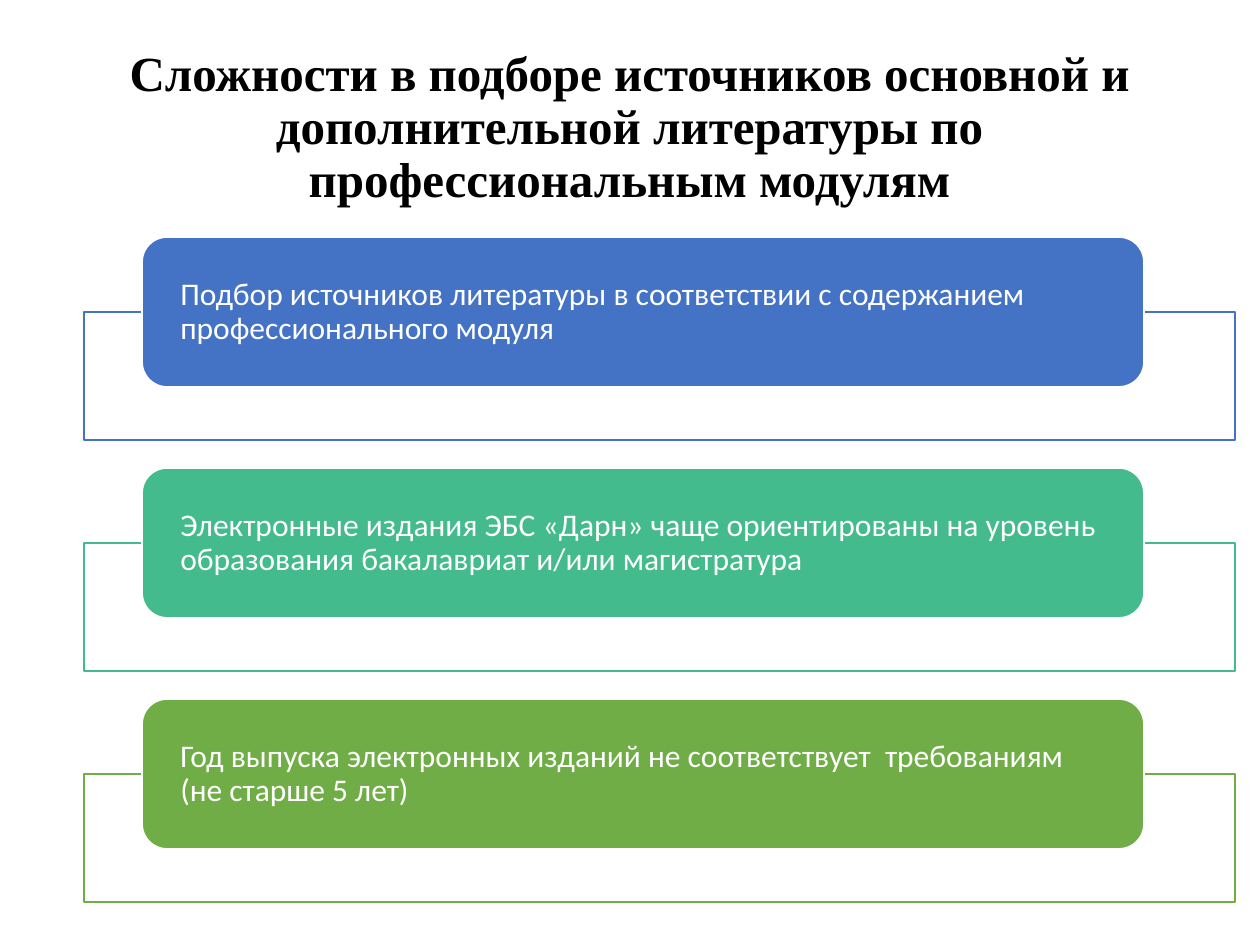
from lxml.etree import SubElement
from pptx import Presentation
from pptx.dml.color import RGBColor
from pptx.enum.shapes import MSO_SHAPE as Shape
from pptx.enum.text import MSO_ANCHOR as Anchor, PP_ALIGN as Align
from pptx.oxml.ns import qn
from pptx.util import Emu, Pt

THEME = {
    "white": RGBColor.from_string("FFFFFF"),
    "title_color": RGBColor.from_string("000000"),
    "title_font": "Times New Roman",
    "title_size": Pt(28),
    "body_font": "Calibri",
    "body_size": Pt(18),
    "line": Pt(1),
}
EMU_PER_PX = 914400 / 126


def px(length):
    return Emu(round(length * EMU_PER_PX))


def write(box, text, align, font, size, color, bold=False):
    frame = box.text_frame
    frame.word_wrap = True
    frame.vertical_anchor = Anchor.MIDDLE
    para = frame.paragraphs[0]
    para.alignment = align
    para.line_spacing = 0.9
    span = para.add_run()
    span.text = text
    span.font.name = font
    span.font.size = size
    span.font.bold = bold
    span.font.color.rgb = color


deck = Presentation()
deck.slide_width, deck.slide_height = px(1260), px(945)
page = deck.slides.add_slide(deck.slide_layouts[6])

# Title
title = page.shapes.add_textbox(px(44), px(37), px(1171), px(183))
write(title, "Сложности в подборе источников основной и дополнительной литературы "
      "по профессиональным модулям", Align.CENTER,
      THEME["title_font"], THEME["title_size"], THEME["title_color"], bold=True)

# Difficulties: an outlined frame behind a filled card
difficulties = [
    ("4472C4", "Подбор источников литературы в соответствии с содержанием "
               "профессионального модуля"),
    ("43BB8D", "Электронные издания ЭБС «Дарн» чаще ориентированы на уровень "
               "образования бакалавриат и/или магистратура"),
    ("70AD47", "Год выпуска электронных изданий не соответствует  требованиям "
               "(не старше 5 лет)"),
]
FIRST_TOP, ROW_STEP = 237, 231
for row, (accent, text) in enumerate(difficulties):
    top = FIRST_TOP + row * ROW_STEP
    color = RGBColor.from_string(accent)

    frame = page.shapes.add_shape(Shape.RECTANGLE, px(84), px(top + 75), px(1151), px(128))
    card = page.shapes.add_shape(Shape.ROUNDED_RECTANGLE, px(142), px(top), px(1002), px(150))
    for shape, fill, line in ((frame, THEME["white"], color), (card, color, THEME["white"])):
        shape.shadow.inherit = False
        shape.fill.solid()
        shape.fill.fore_color.rgb = fill
        shape.line.color.rgb = line
        shape.line.width = THEME["line"]

    # The frame fill is 90% opaque
    frame_color = frame.fill._xPr.find(qn("a:solidFill")).find(qn("a:srgbClr"))
    SubElement(frame_color, qn("a:alpha"), val="90000")

    inner = card.text_frame
    inner.margin_left = inner.margin_right = px(31)
    inner.margin_top = inner.margin_bottom = 0
    write(card, text, Align.LEFT, THEME["body_font"], THEME["body_size"], THEME["white"])

deck.save("out.pptx")
